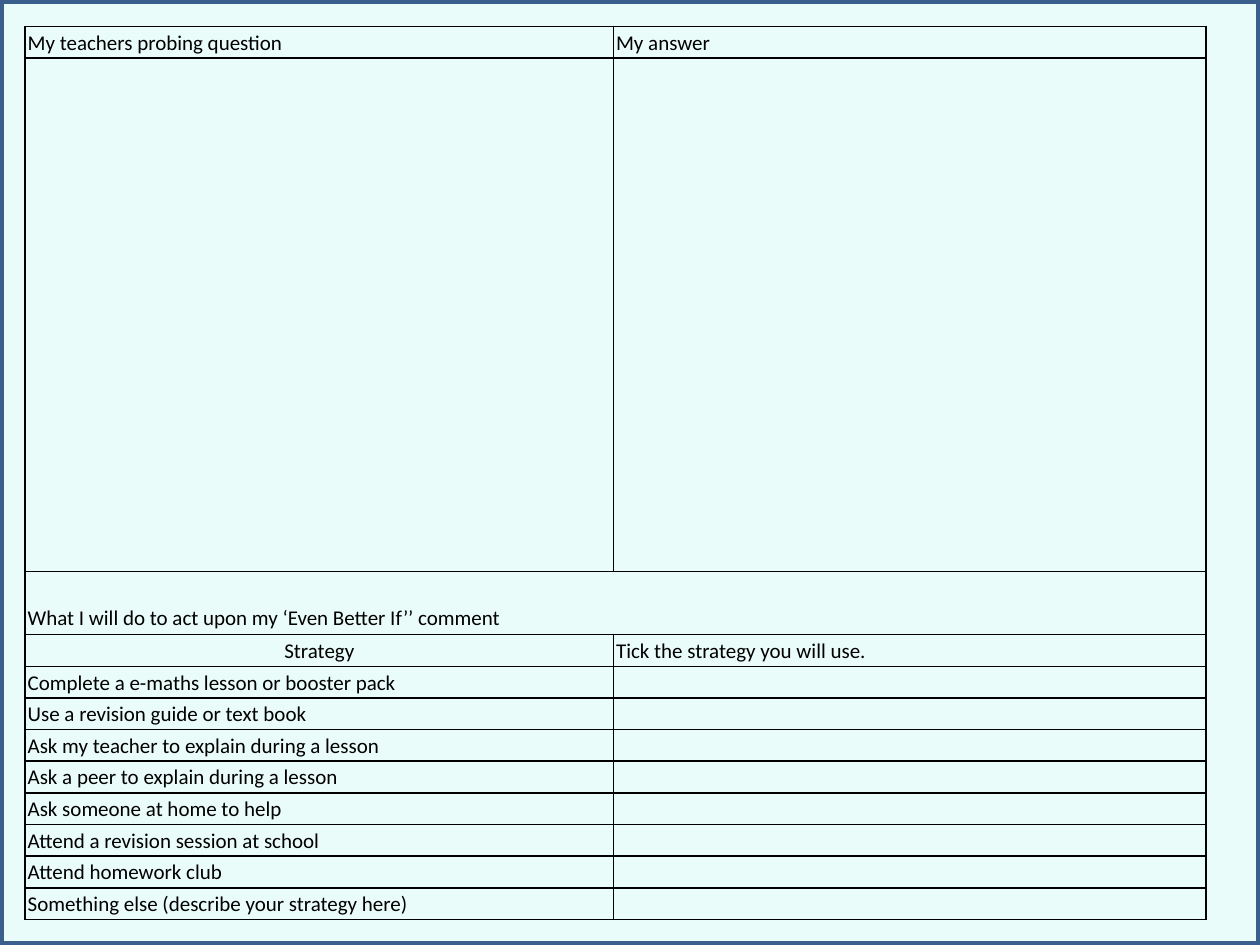
"""Build a pupil response sheet with a question table and a strategy checklist."""
from dataclasses import dataclass

from lxml import etree
from pptx import Presentation
from pptx import util as u
from pptx.dml.color import RGBColor
from pptx.enum import shapes, text
from pptx.oxml.ns import qn

COLORS = {"page": "EAFCF9", "ink": "000000", "frame": "3A5F8C"}
FONT, SIZE = "Calibri", 12
WIDTH, HEIGHT = u.Inches(10), u.Inches(7.5)
LEFT, TOP = u.Inches(0.2), u.Inches(0.21)
COLUMNS = (u.Inches(4.67), u.Inches(4.7))
TABLE_HEIGHT = u.Inches(7.09)
STRATEGIES = (
    "Complete a e-maths lesson or booster pack",
    "Use a revision guide or text book",
    "Ask my teacher to explain during a lesson",
    "Ask a peer to explain during a lesson",
    "Ask someone at home to help",
    "Attend a revision session at school",
    "Attend homework club",
    "Something else (describe your strategy here)",
)


@dataclass(frozen=True)
class Row:
    left: str = ""
    right: str = ""
    units: float = 1
    merged: bool = False
    centered: bool = False


ROWS = (
    Row("My teachers probing question", "My answer"),
    Row(units=16.2),
    Row("What I will do to act upon my ‘Even Better If’’ comment", units=2, merged=True),
    Row("Strategy", "Tick the strategy you will use.", centered=True),
    *(Row(strategy) for strategy in STRATEGIES),
)


def rgb(name: str) -> RGBColor:
    return RGBColor.from_string(COLORS[name])


def add_borders(cell) -> None:
    tc_pr = cell._tc.get_or_add_tcPr()
    for i, side in enumerate(("lnL", "lnR", "lnT", "lnB")):
        ln = etree.Element(qn(f"a:{side}"), w=str(u.Pt(1)))
        fill = etree.SubElement(ln, qn("a:solidFill"))
        etree.SubElement(fill, qn("a:srgbClr"), val=COLORS["ink"])
        tc_pr.insert(i, ln)


def fill_cell(cell, words: str, centered: bool = False) -> None:
    cell.margin_left = cell.margin_right = u.Inches(0.02)
    cell.margin_top = cell.margin_bottom = 0
    cell.fill.background()
    add_borders(cell)
    p = cell.text_frame.paragraphs[0]
    p.line_spacing = 1.15
    p.alignment = text.PP_ALIGN.CENTER if centered else text.PP_ALIGN.LEFT
    if words:
        r = p.add_run()
        r.text = words
        r.font.name, r.font.size = FONT, u.Pt(SIZE)
        r.font.color.rgb = rgb("ink")
    etree.SubElement(p._p, qn("a:endParaRPr"), sz=str(SIZE * 100))


def add_sheet(s, rows: tuple[Row, ...]) -> None:
    unit = TABLE_HEIGHT / sum(row.units for row in rows)
    table = s.shapes.add_table(
        len(rows), len(COLUMNS), LEFT, TOP, sum(COLUMNS), TABLE_HEIGHT
    ).table
    table.first_row = table.horz_banding = False
    for column, width in zip(table.columns, COLUMNS):
        column.width = width
    for i, row in enumerate(rows):
        table.rows[i].height = int(unit * row.units)
        left, right = table.cell(i, 0), table.cell(i, 1)
        fill_cell(left, row.left, row.centered)
        fill_cell(right, row.right)
        if row.merged:
            left.merge(right)
            left.vertical_anchor = text.MSO_ANCHOR.BOTTOM
            left.margin_bottom = u.Inches(0.03)


def add_frame(s) -> None:
    sp = s.shapes.add_shape(shapes.MSO_SHAPE.RECTANGLE, 0, 0, WIDTH, HEIGHT)
    sp.shadow.inherit = False
    sp.fill.background()
    sp.line.color.rgb = rgb("frame")
    sp.line.width = u.Pt(5)


def main() -> None:
    prs = Presentation()
    prs.slide_width, prs.slide_height = WIDTH, HEIGHT
    s = prs.slides.add_slide(prs.slide_layouts[6])
    s.background.fill.solid()
    s.background.fill.fore_color.rgb = rgb("page")
    add_sheet(s, ROWS)
    add_frame(s)
    prs.save("out.pptx")


if __name__ == "__main__":
    main()
